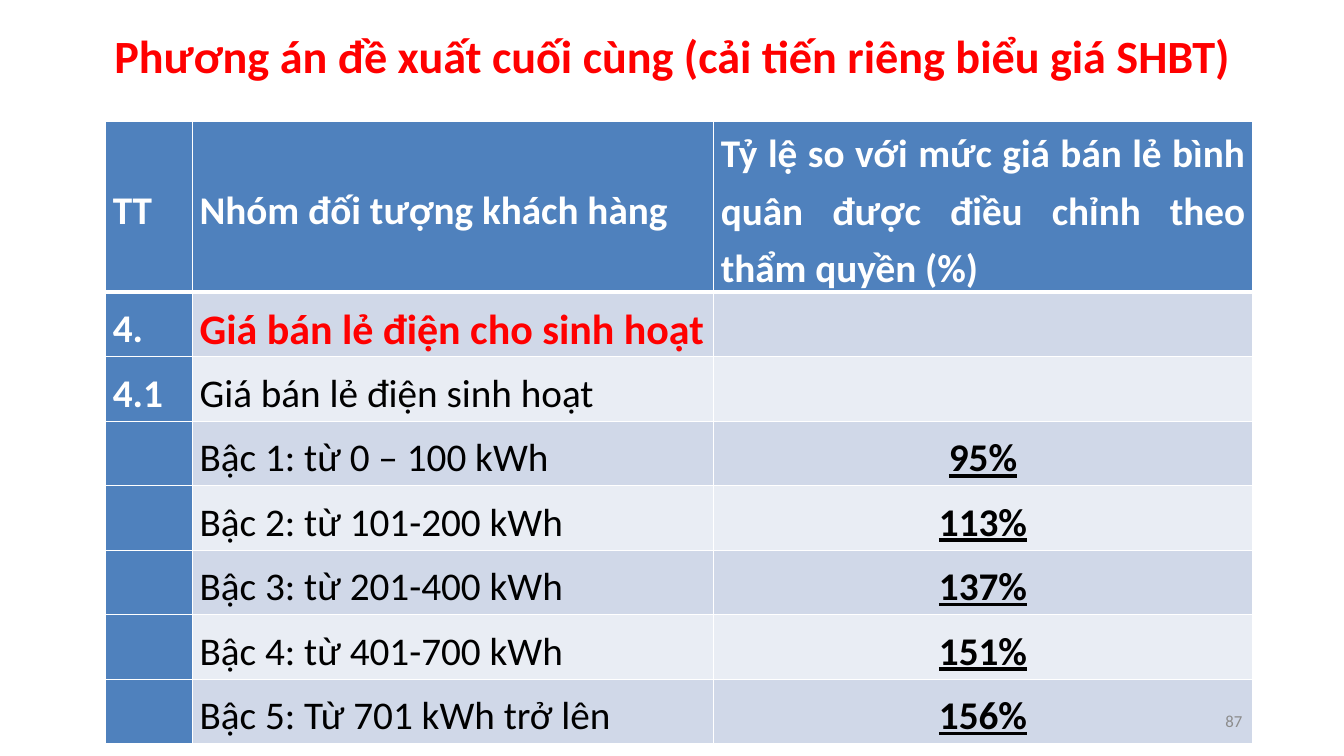
from lxml import etree
from pptx import Presentation
from pptx.dml.color import RGBColor
from pptx.enum.text import MSO_ANCHOR, PP_ALIGN
from pptx.oxml.ns import qn
from pptx.util import Inches, Pt

MIDDLE = MSO_ANCHOR.MIDDLE
CENTER, RIGHT, JUSTIFY = PP_ALIGN.CENTER, PP_ALIGN.RIGHT, PP_ALIGN.JUSTIFY

# Content
TITLE = "Phương án đề xuất cuối cùng (cải tiến riêng biểu giá SHBT)"
PAGE_NUMBER = "87"
ROWS = [
    ("TT", "Nhóm đối tượng khách hàng",
     "Tỷ lệ so với mức giá bán lẻ bình quân được điều chỉnh theo thẩm quyền (%)"),
    ("4.", "Giá bán lẻ điện cho sinh hoạt", ""),
    ("4.1", "Giá bán lẻ điện sinh hoạt", ""),
    ("", "Bậc 1: từ 0 – 100 kWh", "95%"),
    ("", "Bậc 2: từ 101-200 kWh", "113%"),
    ("", "Bậc 3: từ 201-400 kWh", "137%"),
    ("", "Bậc 4: từ 401-700 kWh", "151%"),
    ("", "Bậc 5: Từ 701 kWh trở lên", "156%"),
]
GROUP_ROW = 1

# Style
COLORS = {"accent": "FF0000", "header": "4F81BD", "odd": "D0D8E8", "even": "E9EDF4",
          "white": "FFFFFF", "black": "000000", "grey": "8C8C8C"}
FONT = "Calibri"
COLUMN_WIDTHS = (0.86, 5.17, 5.34)
HEADER_HEIGHT, ROW_HEIGHT = 1.7, 0.64


def write(frame, text, size, color, align, bold=False, underline=False, spacing=None):
    paragraph = frame.paragraphs[0]
    paragraph.text = text
    paragraph.alignment = align
    paragraph.line_spacing = spacing
    font = paragraph.font
    font.name, font.size, font.bold, font.underline = FONT, Pt(size), bold, underline
    font.color.rgb = RGBColor.from_string(COLORS[color])


def add_text(slide, box, *style, **options):
    frame = slide.shapes.add_textbox(*map(Inches, box)).text_frame
    frame.word_wrap = True
    frame.vertical_anchor = MIDDLE
    write(frame, *style, **options)


def set_borders(cell, widths):
    properties = cell._tc.get_or_add_tcPr()
    for side, width in widths.items():
        line = etree.SubElement(properties, qn(f"a:ln{side}"), w=str(Pt(width)))
        fill = etree.SubElement(line, qn("a:solidFill"))
        etree.SubElement(fill, qn("a:srgbClr"), val=COLORS["white"])


def fill_cell(cell, row, column, text):
    is_header = row == 0 or column == 0
    is_group = row == GROUP_ROW and column == 1
    is_rate = row > 0 and column == 2
    set_borders(cell, {"L": 1, "R": 1, "T": 3 if row == 1 else 1, "B": 3 if row == 0 else 1})
    cell.fill.solid()
    band = "header" if is_header else ("odd" if row % 2 else "even")
    cell.fill.fore_color.rgb = RGBColor.from_string(COLORS[band])
    cell.vertical_anchor = MIDDLE
    cell.margin_left = cell.margin_right = Inches(0.07)
    cell.margin_top = cell.margin_bottom = 0
    if text:
        color = "white" if is_header else ("accent" if is_group else "black")
        write(cell.text_frame, text, 30 if is_group else 28, color,
              CENTER if is_rate else JUSTIFY, bold=is_header or is_group or is_rate,
              underline=is_rate, spacing=1.2)


def main():
    presentation = Presentation()
    presentation.slide_width, presentation.slide_height = Inches(13.33), Inches(7.5)
    slide = presentation.slides.add_slide(presentation.slide_layouts[6])

    # Title
    add_text(slide, (0.92, 0.19, 11.5, 0.79), TITLE, 33, "accent", CENTER,
             bold=True, spacing=0.9)

    # Tariff table
    heights = [HEADER_HEIGHT] + [ROW_HEIGHT] * (len(ROWS) - 1)
    table = slide.shapes.add_table(
        len(ROWS), len(COLUMN_WIDTHS), Inches(1.05), Inches(1.2),
        Inches(sum(COLUMN_WIDTHS)), Inches(sum(heights))).table
    for column, width in zip(table.columns, COLUMN_WIDTHS):
        column.width = Inches(width)
    for row, height in zip(table.rows, heights):
        row.height = Inches(height)
    for row, texts in enumerate(ROWS):
        for column, text in enumerate(texts):
            fill_cell(table.cell(row, column), row, column, text)

    # Page number
    add_text(slide, (9.42, 6.95, 3, 0.4), PAGE_NUMBER, 12, "grey", RIGHT)

    presentation.save("out.pptx")


if __name__ == "__main__":
    main()
